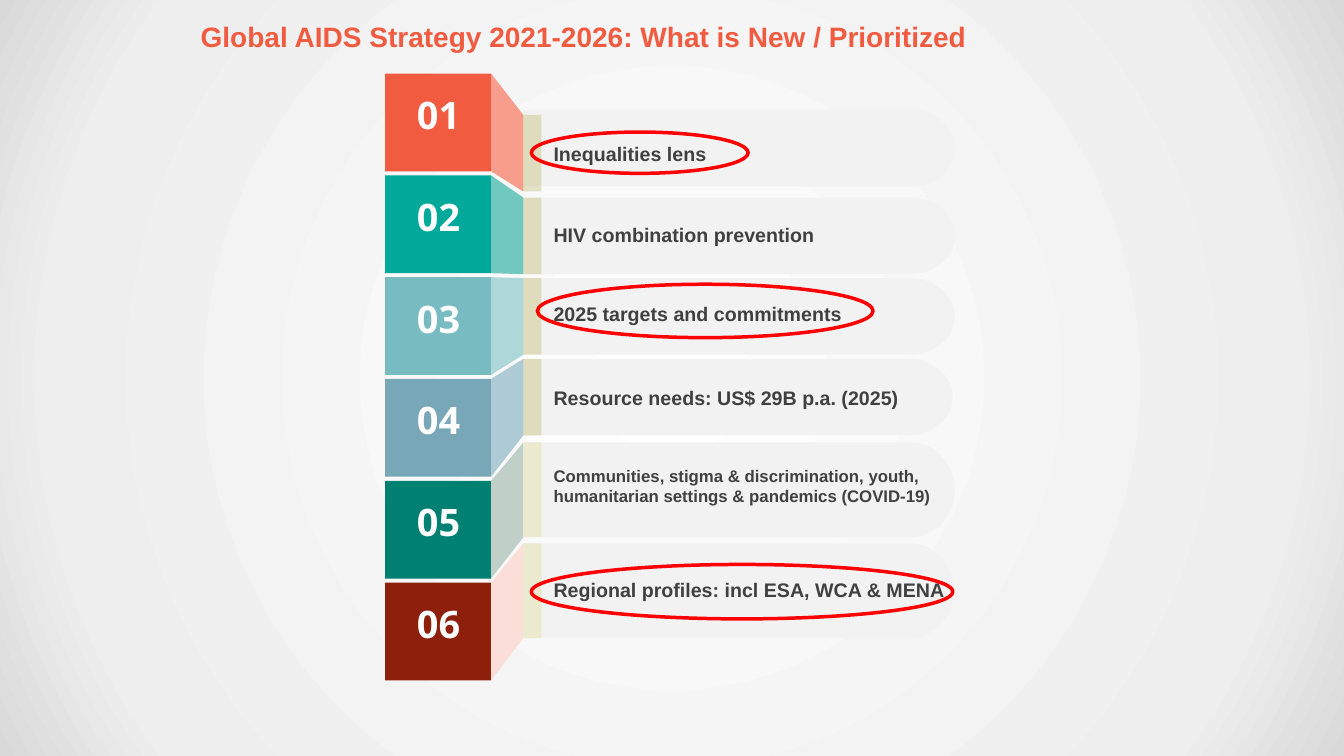
from dataclasses import dataclass
from math import cos, pi, sin

from lxml.etree import SubElement
from pptx import Presentation
from pptx.dml.color import RGBColor
from pptx.enum.shapes import MSO_SHAPE as Shape
from pptx.enum.text import MSO_ANCHOR as Anchor, MSO_AUTO_SIZE as AutoSize, PP_ALIGN as Align
from pptx.oxml.ns import qn
from pptx.util import Inches, Pt

# Columns of the ladder, as offsets in inches from its left edge
TILE_WIDTH = 1.05
TAB_LEFT, TAB_WIDTH = 1.37, 0.18
LABEL_LEFT, LABEL_WIDTH = 1.67, 4.08
BAR_END_WIDTH = 0.44

# Rows of the ladder
TILE_HEIGHT = 0.97
TILE_PITCH = 1.01
OLIVE, CREAM = "B4AC49", "EBE9CE"


@dataclass
class Row:
    label: str
    tile_color: str
    fold_color: str
    bar_top: float
    label_top: float
    bar_height: float = 0.76
    bar_right: float = 5.65
    tab_shift: float = 0
    tab_color: str = OLIVE
    tab_alpha: int = 30
    size: int = 14


ROWS = [
    Row("Inequalities lens", "F15B40", "F79D8C", 1.09, 1.36, tab_shift=0.05),
    Row("HIV combination prevention", "00A99A", "70C8BE", 1.96, 2.16),
    Row("2025 targets and commitments", "78BCC1", "AED7DA", 2.76, 2.95),
    Row("Resource needs: US$ 29B p.a. (2025)", "78A7B7", "AECAD4", 3.56, 3.78, bar_right=5.63),
    Row("Communities, stigma & discrimination, youth, humanitarian settings & pandemics (COVID-19)",
        "007F73", "C0D0C9", 4.39, 4.57, 0.94, tab_color=CREAM, tab_alpha=100, size=12),
    Row("Regional profiles: incl ESA, WCA & MENA", "8E1F0A", "FCDED9", 5.39, 5.68, 0.94,
        bar_right=5.64, tab_color=CREAM, tab_alpha=100),
]

# Left, top, width, height of the rings around the priorities
RINGS = [(5.27, 1.31, 2.15, 0.41), (5.33, 2.82, 3.33, 0.53), (5.27, 5.6, 4.18, 0.54)]


def color(value):
    return RGBColor.from_string(value)


def paint(shape, fill, alpha=100):
    shape.shadow.inherit = False
    shape.line.fill.background()
    shape.fill.solid()
    shape.fill.fore_color.rgb = color(fill)
    if alpha < 100:
        rgb = shape.fill._xPr.find(qn("a:solidFill"))[0]
        SubElement(rgb, qn("a:alpha"), val=str(alpha * 1000))


def add_rectangle(slide, left, top, width, height, fill, alpha=100):
    shape = slide.shapes.add_shape(
        Shape.RECTANGLE, Inches(left), Inches(top), Inches(width), Inches(height))
    paint(shape, fill, alpha)


def add_outline(slide, points, fill):
    corners = [(Inches(x), Inches(y)) for x, y in points]
    builder = slide.shapes.build_freeform(*corners[0], scale=1.0)
    builder.add_line_segments(corners[1:], close=True)
    paint(builder.convert_to_shape(), fill)


def write(frame, text, size, font_name, text_color, align=Align.LEFT):
    paragraph = frame.paragraphs[0]
    paragraph.alignment = align
    run = paragraph.add_run()
    run.text = text
    run.font.size, run.font.bold, run.font.name = Pt(size), True, font_name
    run.font.color.rgb = color(text_color)


def add_text(slide, left, top, width, height):
    box = slide.shapes.add_textbox(Inches(left), Inches(top), Inches(width), Inches(height))
    box.text_frame.auto_size = AutoSize.SHAPE_TO_FIT_TEXT
    return box.text_frame


def add_bar(slide, left, top, right, height):
    """Bar with a half-elliptic right end."""
    middle = top + height / 2
    end_left = right - BAR_END_WIDTH
    angles = [-pi / 2 + pi * step / 32 for step in range(33)]
    end = [(end_left + BAR_END_WIDTH * cos(angle), middle + height / 2 * sin(angle))
           for angle in angles]
    add_outline(slide, [(left, top), *end, (left, top + height)], "F2F2F2")


def add_background(slide):
    slide.background.fill.gradient()
    gradient = slide.element.find(".//" + qn("a:gradFill"))
    for child in list(gradient):
        gradient.remove(child)
    stops = SubElement(gradient, qn("a:gsLst"))
    for position, value in ((0, "FFFFFF"), (81, "EEEEEE"), (100, "D9D9D9")):
        stop = SubElement(stops, qn("a:gs"), pos=str(position * 1000))
        SubElement(stop, qn("a:srgbClr"), val=value)
    circle = SubElement(gradient, qn("a:path"), path="circle")
    SubElement(circle, qn("a:fillToRect"), l="50000", t="50000", r="50000", b="50000")


def add_title(slide, left, top, width, height):
    title = slide.shapes.title
    title.left, title.top = Inches(left), Inches(top)
    title.width, title.height = Inches(width), Inches(height)
    frame = title.text_frame
    frame.vertical_anchor = Anchor.TOP
    frame.auto_size = AutoSize.NONE
    write(frame, "Global AIDS Strategy 2021-2026: What is New / Prioritized", 20, "Arial", "F15B40")


def add_row(slide, left, top, number, row):
    # Bar, numbered tile and the fold that joins them
    tab_left, tab_top = left + TAB_LEFT, row.bar_top + row.tab_shift
    tab_bottom = tab_top + row.bar_height
    tile_right, tile_bottom = left + TILE_WIDTH, top + TILE_HEIGHT
    add_bar(slide, tab_left, row.bar_top, left + row.bar_right, row.bar_height)
    add_rectangle(slide, left, top, TILE_WIDTH, TILE_HEIGHT, row.tile_color)
    add_outline(slide, [(tile_right, top), (tab_left, tab_top),
                        (tab_left, tab_bottom), (tile_right, tile_bottom)], row.fold_color)
    add_rectangle(slide, tab_left, tab_top, TAB_WIDTH, row.bar_height,
                  row.tab_color, row.tab_alpha)

    # Number and label
    number_frame = add_text(slide, left + 0.21, top + 0.13, 0.64, 0.56)
    number_frame.word_wrap = False
    write(number_frame, f"{number:02}", 27, "Open Sans", "FFFFFF", Align.CENTER)
    label_frame = add_text(slide, left + LABEL_LEFT, row.label_top, LABEL_WIDTH, 0.34)
    label_frame.word_wrap = True
    label_frame.margin_left = label_frame.margin_right = 0
    write(label_frame, row.label, row.size, "Arial", "404040")


def add_ladder(slide, left, top):
    for index, row in enumerate(ROWS):
        add_row(slide, left, top + index * TILE_PITCH, index + 1, row)


def add_rings(slide):
    for ring in RINGS:
        shape = slide.shapes.add_shape(Shape.OVAL, *(Inches(length) for length in ring))
        shape.shadow.inherit = False
        shape.fill.background()
        shape.line.color.rgb = color("FF0000")
        shape.line.width = Pt(2.5)


def main():
    presentation = Presentation()
    presentation.slide_width, presentation.slide_height = Inches(13.33), Inches(7.5)
    slide = presentation.slides.add_slide(presentation.slide_layouts[5])
    add_background(slide)
    add_title(slide, 1.89, 0.14, 8.5, 0.44)
    add_ladder(slide, 3.82, 0.73)
    add_rings(slide)
    presentation.save("out.pptx")


if __name__ == "__main__":
    main()
